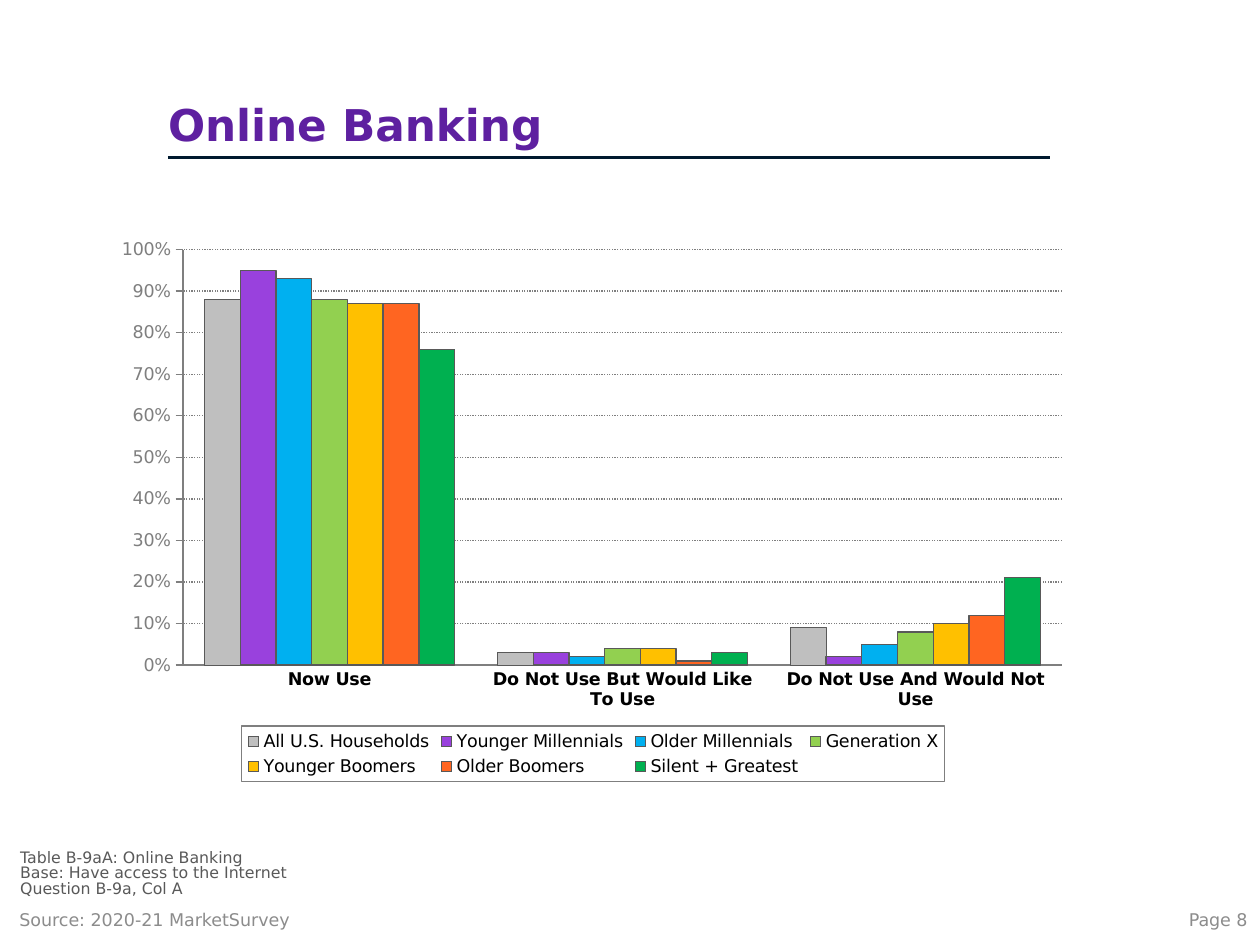
from lxml import etree
from pptx import Presentation
from pptx.chart.data import CategoryChartData
from pptx.dml.color import RGBColor
from pptx.enum import chart as ch, dml, shapes, text
from pptx.oxml import ns, parse_xml
from pptx.util import Pt

# Content
TITLE = "Online Banking"
NOTES = ["Table B-9aA: Online Banking", "Base: Have access to the Internet",
         "Question B-9a, Col A"]
SOURCE = "Source: 2020-21 MarketSurvey"
PAGE = "Page 8"
CATEGORIES = ["Now Use", "Do Not Use But Would Like To Use",
              "Do Not Use And Would Not Use"]
SERIES = [
    ("All U.S. Households", (0.88, 0.03, 0.09), RGBColor(0xBF, 0xBF, 0xBF)),
    ("Younger Millennials", (0.95, 0.03, 0.02), RGBColor(0x99, 0x41, 0xDD)),
    ("Older Millennials", (0.93, 0.02, 0.05), RGBColor(0x00, 0xB0, 0xF0)),
    ("Generation X", (0.88, 0.04, 0.08), RGBColor(0x92, 0xD0, 0x50)),
    ("Younger Boomers", (0.87, 0.04, 0.10), RGBColor(0xFF, 0xC0, 0x00)),
    ("Older Boomers", (0.87, 0.01, 0.12), RGBColor(0xFF, 0x65, 0x21)),
    ("Silent + Greatest", (0.76, 0.03, 0.21), RGBColor(0x00, 0xB0, 0x50)),
]

# Style
FONT = "DejaVu Sans"
PURPLE = RGBColor(0x5E, 0x20, 0xA0)
NAVY = RGBColor(0x00, 0x19, 0x2F)
BLACK = RGBColor(0, 0, 0)
DARK = RGBColor(0x59, 0x59, 0x59)
GREY = RGBColor(0x7F, 0x7F, 0x7F)
LIGHT = RGBColor(0x8C, 0x8C, 0x8C)
MARGINS = ("margin_left", "margin_top", "margin_right", "margin_bottom")

# Chart parts as fractions of the chart frame: x, y, w, h
PLOT = (0.08, 0.04, 0.9, 0.75)
LEGEND = (0.14, 0.9, 0.72, 0.1)


def set_font(font, size, color, bold=False):
    for name, value in dict(name=FONT, size=Pt(size), bold=bold).items():
        setattr(font, name, value)
    font.color.rgb = color


def set_line(line, color, width):
    line.color.rgb = color
    line.width = Pt(width)


def fill_text(shape, lines, size, color, anchor, insets=None, bold=False,
              align=text.PP_ALIGN.LEFT, spacing=1.0):
    tf = shape.text_frame
    tf.word_wrap = True
    tf.auto_size = text.MSO_AUTO_SIZE.NONE
    tf.vertical_anchor = anchor
    for name, value in zip(MARGINS, insets or ()):
        setattr(tf, name, Pt(value))
    for i, line in enumerate(lines):
        p = tf.add_paragraph() if i else tf.paragraphs[0]
        p.alignment, p.line_spacing = align, spacing
        r = p.add_run()
        r.text = line
        set_font(r.font, size, color, bold)


def layout_xml(box, inner=False):
    target = '<c:layoutTarget val="inner"/>' if inner else ""
    modes = "".join(f'<c:{k}Mode val="edge"/>' for k in "xy")
    sizes = "".join(f'<c:{k} val="{v}"/>' for k, v in zip("xywh", box))
    return parse_xml(f'<c:layout {ns.nsdecls("c")}><c:manualLayout>'
                     f'{target}{modes}{sizes}</c:manualLayout></c:layout>')


prs = Presentation()
prs.slide_width, prs.slide_height = Pt(720), Pt(540)
s = prs.slides.add_slide(prs.slide_layouts[5])

# Title and rule
title = s.shapes.title
title.left, title.top, title.width, title.height = map(Pt, (96, 29, 504, 61))
fill_text(title, [TITLE], 25, PURPLE, text.MSO_ANCHOR.BOTTOM,
          (0, 3.6, 0, 3.6), bold=True, spacing=0.9)
rule = s.shapes.add_connector(shapes.MSO_CONNECTOR.STRAIGHT,
                              Pt(96), Pt(90), Pt(600), Pt(90))
set_line(rule.line, NAVY, 2)
etree.SubElement(rule.element.spPr, ns.qn("a:effectLst"))

# Notes and footer
MIDDLE, BOTTOM = text.MSO_ANCHOR.MIDDLE, text.MSO_ANCHOR.BOTTOM
FOOTERS = [
    ((11.5, 486.7, 699, 26), dict(lines=NOTES, size=9, color=DARK, spacing=0.8,
                                  anchor=BOTTOM, insets=(0, 0, 0, 0))),
    ((4, 511, 240, 29), dict(lines=[SOURCE], size=10, color=LIGHT,
                             anchor=MIDDLE)),
    ((558, 511, 162, 29), dict(lines=[PAGE], size=10, color=LIGHT,
                               anchor=MIDDLE, align=text.PP_ALIGN.RIGHT)),
]
for box, style in FOOTERS:
    fill_text(s.shapes.add_textbox(*map(Pt, box)), **style)

# Chart
data = CategoryChartData(number_format="0%")
data.categories = CATEGORIES
for name, values, _ in SERIES:
    data.add_series(name, values)
chart = s.shapes.add_chart(ch.XL_CHART_TYPE.COLUMN_CLUSTERED,
                           *map(Pt, (60, 130, 558, 317)), data).chart
chart.has_title = False
set_font(chart.font, 10, BLACK)
plot = chart.plots[0]
plot.gap_width, plot.overlap, plot.vary_by_categories = 120, 0, False
for i, (series, (_, _, color)) in enumerate(zip(plot.series, SERIES)):
    series.format.fill.solid()
    series.format.fill.fore_color.rgb = color
    set_line(series.format.line, DARK, 0.75 if i else 0.5)

# Axes
cat, val = chart.category_axis, chart.value_axis
for axis, color, bold, tick in ((cat, BLACK, True, ch.XL_TICK_MARK.NONE),
                                (val, GREY, False, ch.XL_TICK_MARK.OUTSIDE)):
    set_font(axis.tick_labels.font, 10, color, bold)
    set_line(axis.format.line, GREY, 0.75)
    axis.major_tick_mark = tick
    axis.minor_tick_mark = ch.XL_TICK_MARK.NONE
val.minimum_scale, val.maximum_scale, val.major_unit = 0, 1, 0.1
val.tick_labels.number_format = "0%"
val.tick_labels.number_format_is_linked = False
val.has_major_gridlines = True
grid = val.major_gridlines.format.line
set_line(grid, GREY, 0.75)
grid.dash_style = dml.MSO_LINE.ROUND_DOT

# Legend with a frame
chart.has_legend = True
legend = chart.legend
legend.position = ch.XL_LEGEND_POSITION.BOTTOM
legend.include_in_layout = False
set_font(legend.font, 10, BLACK)
node = chart.element.find(".//" + ns.qn("c:legend"))
node.find(ns.qn("c:legendPos")).addnext(layout_xml(LEGEND))
node.find(ns.qn("c:overlay")).addnext(parse_xml(
    f'<c:spPr {ns.nsdecls("c", "a")}><a:ln w="9525"><a:solidFill>'
    f'<a:srgbClr val="{GREY}"/></a:solidFill></a:ln></c:spPr>'))

# Plot position
area = chart.element.find(".//" + ns.qn("c:plotArea"))
for old in area.findall(ns.qn("c:layout")):
    area.remove(old)
area.insert(0, layout_xml(PLOT, inner=True))

prs.save("out.pptx")
